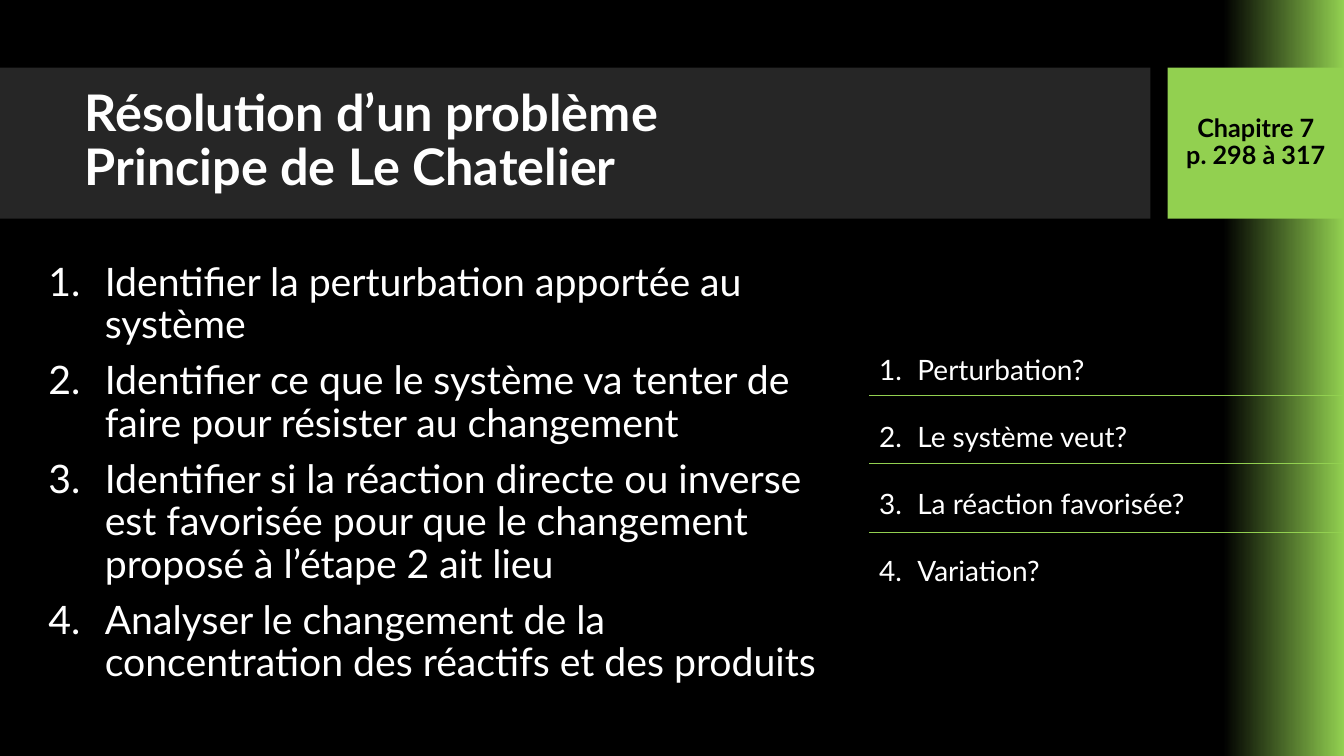
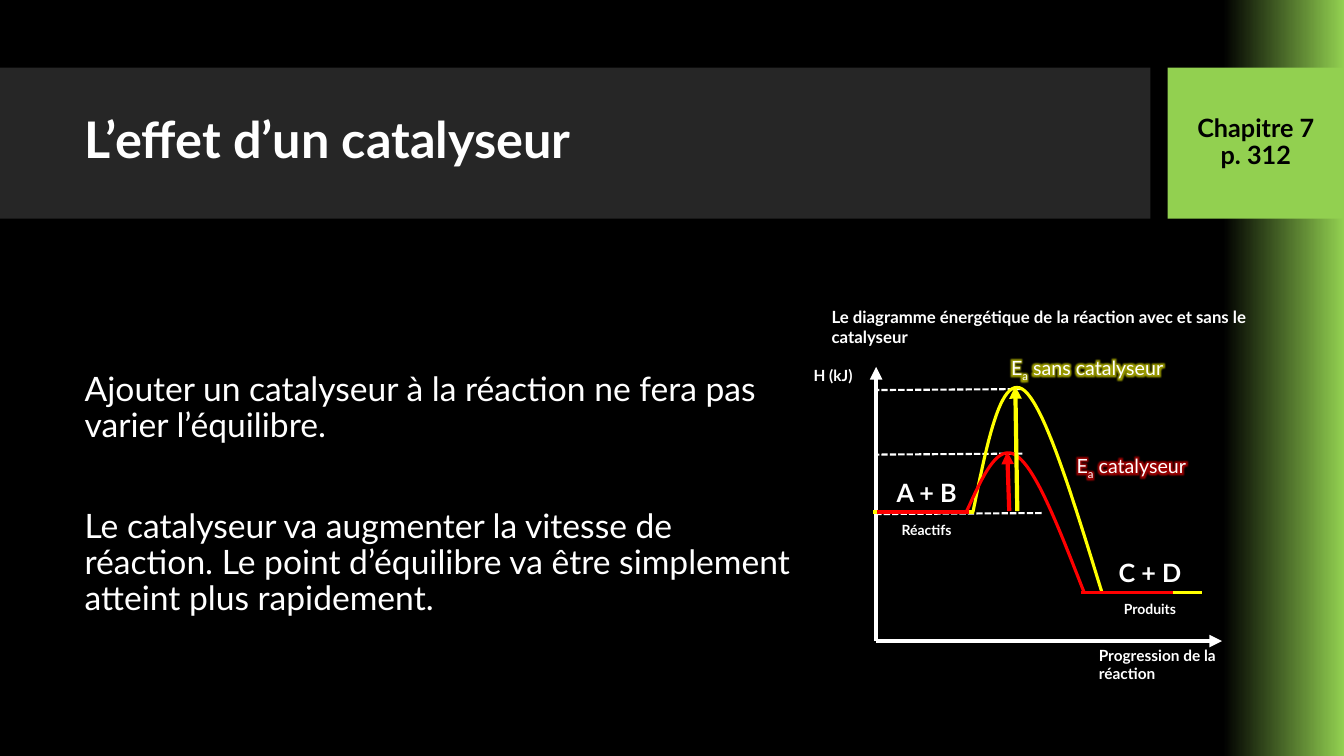
from lxml import etree
from pptx import Presentation
from pptx.dml.color import RGBColor
from pptx.enum.dml import MSO_LINE
from pptx.enum.shapes import MSO_CONNECTOR, MSO_SHAPE
from pptx.enum.text import MSO_ANCHOR, MSO_AUTO_SIZE, PP_ALIGN
from pptx.oxml.ns import qn
from pptx.util import Inches, Pt

LEFT, CENTER = PP_ALIGN.LEFT, PP_ALIGN.CENTER
TOP, MIDDLE = MSO_ANCHOR.TOP, MSO_ANCHOR.MIDDLE
NO_AUTOFIT = MSO_AUTO_SIZE.NONE
STRAIGHT, RECT = MSO_CONNECTOR.STRAIGHT, MSO_SHAPE.RECTANGLE
DASH = MSO_LINE.SQUARE_DOT

FONT = "Lato"
WHITE, BLACK, GREY, GREEN = "FFFFFF", "000000", "262626", "92D050"
YELLOW, RED = "FFFF00", "FF0000"
WIDTH, HEIGHT = 13.33, 7.5
BAND_TOP, BAND_HEIGHT = 0.67, 1.5


def rgb(value):
    return RGBColor.from_string(value)


def place(sp, x, y, w, h):
    sp.left, sp.top, sp.width, sp.height = map(Inches, (x, y, w, h))


def style_font(font, size, color=WHITE, bold=False):
    font.name = FONT
    font.size = Pt(size)
    font.bold = bold
    font.color.rgb = rgb(color)


def set_indent(p, indent, numbered):
    pPr = p._p.get_or_add_pPr()
    pPr.set("marL", str(Inches(indent)))
    pPr.set("indent", str(-Inches(indent)))
    if numbered:
        etree.SubElement(pPr, qn("a:buAutoNum"), type="arabicPeriod")
    else:
        etree.SubElement(pPr, qn("a:buNone"))


def write(sp, lines, size, color=WHITE, bold=False, align=LEFT, anchor=TOP,
          spacing=1.0, gap=0, indent=0):
    tf = sp.text_frame
    tf.word_wrap = True
    tf.auto_size = NO_AUTOFIT
    tf.vertical_anchor = anchor
    for i, line in enumerate(lines):
        p = tf.add_paragraph() if i else tf.paragraphs[0]
        p.text = line
        p.alignment = align
        p.line_spacing = spacing
        p.space_before = Pt(gap if i else 0)
        set_indent(p, indent, indent > 0)
        for r in p.runs:
            style_font(r.font, size, color, bold)


def add_label(slide, box, lines, size, **options):
    sp = slide.shapes.add_textbox(*map(Inches, box))
    write(sp, lines, size, **options)
    return sp


def add_line(slide, start, end, color, width, dash=None, arrow=False):
    line = slide.shapes.add_connector(STRAIGHT, *map(Inches, (*start, *end)))
    line.line.color.rgb = rgb(color)
    line.line.width = Pt(width)
    if dash is not None:
        line.line.dash_style = dash
    if arrow:
        etree.SubElement(line.line._get_or_add_ln(), qn("a:tailEnd"), type="triangle")
    etree.SubElement(line._element.spPr, qn("a:effectLst"))


def bezier(p0, p1, p2, p3, steps=24):
    for i in range(1, steps + 1):
        t = i / steps
        u = 1 - t
        weights = (u ** 3, 3 * u * u * t, 3 * u * t * t, t ** 3)
        yield tuple(sum(k * p[axis] for k, p in zip(weights, (p0, p1, p2, p3)))
                    for axis in (0, 1))


def add_curve(slide, points, color):
    path = [*bezier(*points[:4]), *bezier(*points[3:])]
    builder = slide.shapes.build_freeform(
        Inches(points[0][0]), Inches(points[0][1]), scale=1.0)
    builder.add_line_segments([(Inches(x), Inches(y)) for x, y in path], close=False)
    sp = builder.convert_to_shape()
    sp.shadow.inherit = False
    sp.fill.background()
    sp.line.color.rgb = rgb(color)
    sp.line.width = Pt(2.25)


def add_energy_label(slide, box, suffix, glow_color):
    sp = slide.shapes.add_textbox(*map(Inches, box))
    sp.text_frame.word_wrap = True
    p = sp.text_frame.paragraphs[0]
    for text in ("E", "a", suffix):
        r = p.add_run()
        r.text = text
        rPr = r._r.get_or_add_rPr()
        if text == "a":
            rPr.set("baseline", "-25000")
        effects = etree.SubElement(rPr, qn("a:effectLst"))
        glow = etree.SubElement(effects, qn("a:glow"), rad=str(Pt(8)))
        color = etree.SubElement(glow, qn("a:srgbClr"), val=glow_color)
        etree.SubElement(color, qn("a:alpha"), val="60000")
        style_font(r.font, 14)


def set_background(master):
    fill = master.background.fill
    fill.gradient()
    fill.gradient_angle = 0
    for stop, position, color in zip(fill.gradient_stops, (0.91, 1), (BLACK, GREEN)):
        stop.position = position
        stop.color.rgb = rgb(color)


def add_band(slide, x, w, color):
    sp = slide.shapes.add_shape(
        RECT, *map(Inches, (x, BAND_TOP, w, BAND_HEIGHT)))
    sp.shadow.inherit = False
    sp.fill.solid()
    sp.fill.fore_color.rgb = rgb(color)
    sp.line.fill.background()
    slide.shapes.element.insert(2, sp._element)
    return sp


def new_slide(prs, title, chapter):
    slide = prs.slides.add_slide(prs.slide_layouts[1])
    tag = add_band(slide, 11.58, 1.75, GREEN)
    write(tag, chapter, 18, BLACK, True, CENTER, MIDDLE, 0.9)
    add_band(slide, 0, 11.41, GREY)
    sp = slide.shapes.title
    place(sp, 0.74, 0.82, 10.51, 1.18)
    write(sp, [title], 36, bold=True, anchor=MIDDLE, spacing=0.9)
    return slide


def add_body(slide, box, lines, size, gap, indent=0):
    sp = slide.placeholders[1]
    place(sp, *box)
    write(sp, lines, size, anchor=MIDDLE, spacing=0.9, gap=gap, indent=indent)


def add_question_list(slide, x, y, w, h, questions):
    add_label(slide, (x, y, w, h), questions, 20, spacing=2, indent=0.38)
    for i in range(len(questions) - 1):
        rule_y = y + 0.81 + i * 0.68
        add_line(slide, (x, rule_y), (x + w, rule_y), GREEN, 0.75)


def add_energy_diagram(slide, x, y):
    def at(dx, dy):
        return x + dx, y + dy

    def box(dx, dy, w, h):
        return x + dx, y + dy, w, h

    reactants, products, axis_x, axis_y = 2.09, 2.89, 0.72, 3.37
    for right, level in ((2.17, 1.51), (2.36, 2.1), (2.17, 0.87)):
        add_line(slide, at(right, level), at(axis_x, level + 0.01), WHITE, 1.5, DASH)
    for end in ((axis_x, 0.65), (4.15, axis_y)):
        add_line(slide, at(axis_x, axis_y), at(*end), WHITE, 3, arrow=True)

    for area, text, size, align in (
        ((0, 0.59, 0.78, 0.29), "H (kJ)", 11, LEFT),
        ((2.83, 3.37, 1.67, 0.47), "Progression de la réaction", 11, LEFT),
        ((0.72, 1.7, 1, 0.4), "A + B", 18, CENTER),
        ((2.93, 2.49, 1.01, 0.4), "C + D", 18, CENTER),
        ((0.18, 0, 4.85, 0.5),
         "Le diagramme énergétique de la réaction avec et sans le catalyseur", 12, LEFT),
        ((0.72, 2.13, 1, 0.27), "Réactifs", 10, CENTER),
        ((2.93, 2.92, 1.01, 0.27), "Produits", 10, CENTER),
    ):
        add_label(slide, box(*area), [text], size, bold=True, align=align)

    for color, start, end, length, curve in (
        (YELLOW, 0.69, 2.95, 1,
         ((1.68, 2.09), (1.82, 1.41), (1.95, 0.74), (2.17, 0.87),
          (2.38, 1), (2.67, 1.95), (2.96, 2.89))),
        (RED, 0.73, 2.75, 0.91,
         ((1.61, 2.1), (1.77, 1.75), (1.92, 1.4), (2.11, 1.53),
          (2.31, 1.66), (2.54, 2.27), (2.78, 2.88))),
    ):
        for left, level in ((end, products), (start, reactants)):
            add_line(slide, at(left, level), at(left + length, level), color, 2.25)
        add_curve(slide, [at(*point) for point in curve], color)

    for color, foot, peak, area, suffix in (
        (YELLOW, 2.12, 0.84, (1.96, 0.49, 2.44, 0.34), " sans catalyseur"),
        (RED, 2.04, 1.49, (2.61, 1.46, 2.44, 0.34), " catalyseur"),
    ):
        add_line(slide, at(foot, 2.08), at(foot - 0.02, peak), color, 3, arrow=True)
        add_energy_label(slide, box(*area), suffix, color)


def build_method_slide(prs):
    slide = new_slide(prs, "Résolution d’un problème\vPrincipe de Le Chatelier",
                      ["Chapitre 7", "p. 298 à 317"])
    add_body(slide, (0.38, 2.34, 7.96, 4.72), [
        "Identifier la perturbation apportée au système",
        "Identifier ce que le système va tenter de faire pour résister au changement",
        "Identifier si la réaction directe ou inverse est favorisée pour que le "
        "changement proposé à l’étape 2 ait lieu",
        "Analyser le changement de la concentration des réactifs et des produits",
    ], 28, gap=10, indent=0.56)
    add_question_list(slide, 8.62, 3.11, 4.71, 2.69, [
        "Perturbation?", "Le système veut?", "La réaction favorisée?", "Variation?"])


def build_catalyst_slide(prs):
    slide = new_slide(prs, "L’effet d’un catalyseur", ["Chapitre 7", "p. 312"])
    add_body(slide, (0.74, 2.99, 7.23, 3.84), [
        "Ajouter un catalyseur à la réaction ne fera pas varier l’équilibre.",
        "Le catalyseur va augmenter la vitesse de réaction. Le point d’équilibre "
        "va être simplement atteint plus rapidement.",
    ], 24, gap=46)
    add_energy_diagram(slide, 7.97, 2.99)


def main():
    prs = Presentation()
    prs.slide_width, prs.slide_height = Inches(WIDTH), Inches(HEIGHT)
    set_background(prs.slide_master)
    build_method_slide(prs)
    build_catalyst_slide(prs)
    prs.save("out.pptx")


if __name__ == "__main__":
    main()
